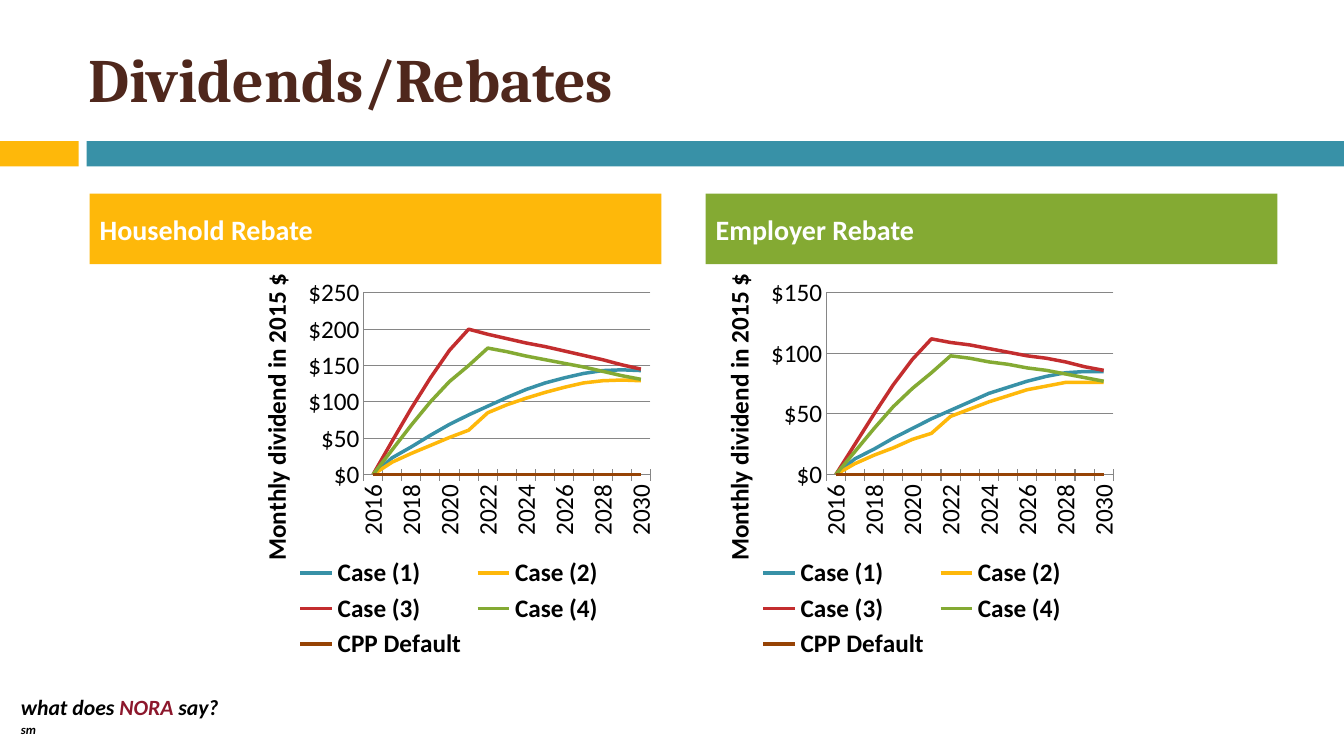
from dataclasses import dataclass

from lxml import etree
from pptx import Presentation
from pptx import util as u
from pptx.chart.chart import Chart
from pptx.chart.data import CategoryChartData
from pptx.dml.color import RGBColor
from pptx.enum import chart as ch
from pptx.enum import shapes, text
from pptx.oxml import parse_xml
from pptx.oxml.ns import nsdecls, qn
from pptx.shapes.autoshape import Shape
from pptx.slide import Slide
from pptx.text.text import Font


@dataclass(frozen=True)
class Theme:
    teal: str = "3891A7"
    gold: str = "FEB80A"
    red: str = "C32D2E"
    green: str = "84AA33"
    rust: str = "964305"
    brown: str = "4F271C"
    wine: str = "8C172C"
    black: str = "000000"
    white: str = "FFFFFF"
    grey: str = "868686"
    head: str = "Cambria"
    body: str = "Calibri"
    title: float = 44
    label: float = 20
    plot: float = 18
    motto: float = 15.5


@dataclass(frozen=True)
class Box:
    left: float
    top: float
    width: float
    height: float

    def emu(self) -> tuple[int, ...]:
        sides = (self.left, self.top, self.width, self.height)
        return tuple(u.Inches(side) for side in sides)


@dataclass(frozen=True)
class Panel:
    name: str
    fill: str
    label: Box
    plot: Box
    rows: tuple[tuple[int, ...], ...]


T = Theme()
YEARS = [str(year) for year in range(2016, 2031)]
CASES = {
    "Case (1)": T.teal,
    "Case (2)": T.gold,
    "Case (3)": T.red,
    "Case (4)": T.green,
    "CPP Default": T.rust,
}
ZERO = (0,) * len(YEARS)
BARS = (
    (Box(0, 1.4, 0.78, 0.25), T.gold),
    (Box(0.86, 1.4, 12.47, 0.25), T.teal),
)
PANELS = (
    Panel("Household Rebate", T.gold, Box(0.89, 1.92, 5.67, 0.7), Box(2.33, 2.67, 4.25, 3.92), (
        (0, 23, 38, 54, 69, 82, 94, 106, 117, 126, 133, 139, 143, 144, 143),
        (0, 17, 29, 40, 51, 61, 85, 96, 105, 113, 120, 126, 129, 130, 129),
        (0, 46, 91, 133, 171, 200, 193, 187, 181, 176, 170, 164, 158, 151, 145),
        (0, 34, 68, 100, 128, 150, 174, 169, 163, 158, 153, 148, 142, 136, 131),
        ZERO,
    )),
    Panel("Employer Rebate", T.green, Box(7, 1.92, 5.67, 0.7), Box(6.92, 2.67, 4.25, 3.92), (
        (0, 13, 21, 30, 38, 46, 53, 60, 67, 72, 77, 81, 84, 85, 85),
        (0, 9, 16, 22, 29, 34, 48, 54, 60, 65, 70, 73, 76, 76, 76),
        (0, 25, 50, 74, 95, 112, 109, 107, 104, 101, 98, 96, 93, 89, 86),
        (0, 19, 38, 56, 71, 84, 98, 96, 93, 91, 88, 86, 83, 80, 77),
        ZERO,
    )),
)
MOTTO = (("what does ", T.black), ("NORA ", T.wine), ("say? ", T.black), ("sm", T.black))


def style(font: Font, size: float, color: str, face: str = T.body, bold: bool = True) -> None:
    font.size = u.Pt(size)
    font.name = face
    font.bold = bold
    font.color.rgb = RGBColor.from_string(color)


def block(slide: Slide, box: Box, fill: str) -> Shape:
    shape = slide.shapes.add_shape(shapes.MSO_SHAPE.RECTANGLE, *box.emu())
    shape.shadow.inherit = False
    shape.fill.solid()
    shape.fill.fore_color.rgb = RGBColor.from_string(fill)
    shape.line.fill.background()
    return shape


def write(shape: Shape, words: str, size: float, color: str, face: str = T.body) -> None:
    frame = shape.text_frame
    frame.word_wrap = True
    frame.vertical_anchor = text.MSO_ANCHOR.MIDDLE
    frame.text = words
    line = frame.paragraphs[0]
    line.alignment = text.PP_ALIGN.LEFT
    style(line.runs[0].font, size, color, face)


def motto(slide: Slide) -> None:
    frame = slide.shapes.add_textbox(*Box(0.11, 6.83, 2.33, 0.36).emu()).text_frame
    frame.word_wrap = False
    frame.auto_size = text.MSO_AUTO_SIZE.SHAPE_TO_FIT_TEXT
    for words, color in MOTTO:
        run = frame.paragraphs[0].add_run()
        run.text = words
        style(run.font, T.motto, color)
        run.font.italic = True
    run.font._element.set("baseline", "30000")


def place(chart: Chart, area: Box) -> None:
    plot = chart._chartSpace.chart.plotArea
    for old in plot.findall(qn("c:layout")):
        plot.remove(old)
    layout = parse_xml(
        f'<c:layout {nsdecls("c")}><c:manualLayout><c:layoutTarget val="inner"/>'
        '<c:xMode val="edge"/><c:yMode val="edge"/>'
        f'<c:x val="{area.left}"/><c:y val="{area.top}"/>'
        f'<c:w val="{area.width}"/><c:h val="{area.height}"/>'
        '</c:manualLayout></c:layout>'
    )
    plot.insert(0, layout)


def axes(chart: Chart) -> None:
    cat, val = chart.category_axis, chart.value_axis
    grey = RGBColor.from_string(T.grey)
    for axis in (cat, val):
        style(axis.tick_labels.font, T.plot, T.black, bold=False)
        axis.format.line.color.rgb = grey
        axis.format.line.width = u.Pt(0.75)
        axis.major_tick_mark = ch.XL_TICK_MARK.NONE
    cat.major_tick_mark = ch.XL_TICK_MARK.CROSS
    cat._element.find(qn("c:txPr")).find(qn("a:bodyPr")).set("rot", "-5400000")
    skip = etree.Element(qn("c:tickLblSkip"), val="2")
    cat._element.find(qn("c:noMultiLvlLbl")).addprevious(skip)
    val.has_major_gridlines = True
    val.major_gridlines.format.line.color.rgb = grey
    val.major_gridlines.format.line.width = u.Pt(0.75)
    val.tick_labels.number_format = '"$"#,##0'
    val.tick_labels.number_format_is_linked = False
    frame = val.axis_title.text_frame
    frame.text = "Monthly dividend in 2015 $"
    style(frame.paragraphs[0].runs[0].font, T.plot, T.black)
    frame._txBody.bodyPr.set("rot", "-5400000")


def graph(slide: Slide, panel: Panel) -> None:
    data = CategoryChartData()
    data.categories = YEARS
    for name, row in zip(CASES, panel.rows):
        data.add_series(name, row)
    chart = slide.shapes.add_chart(ch.XL_CHART_TYPE.LINE, *panel.plot.emu(), data).chart
    style(chart.font, T.plot, T.black, bold=False)
    chart.has_title = False
    chart.has_legend = True
    chart.legend.position = ch.XL_LEGEND_POSITION.BOTTOM
    chart.legend.include_in_layout = False
    style(chart.legend.font, T.plot, T.black)
    chart.plots[0].vary_by_categories = False
    for line, color in zip(chart.plots[0].series, CASES.values()):
        line.smooth = False
        line.marker.style = ch.XL_MARKER_STYLE.NONE
        line.format.line.color.rgb = RGBColor.from_string(color)
        line.format.line.width = u.Pt(2.5)
    axes(chart)
    place(chart, Box(0.3, 0.06, 0.67, 0.46))


def main() -> None:
    deck = Presentation()
    deck.slide_width, deck.slide_height = u.Inches(13.33), u.Inches(7.5)
    slide = deck.slides.add_slide(deck.slide_layouts[6])
    for box, fill in BARS:
        block(slide, box, fill)
    motto(slide)
    title = slide.shapes.add_textbox(*Box(0.78, 0.3, 11.89, 0.95).emu())
    write(title, "Dividends/Rebates", T.title, T.brown, T.head)
    for panel in PANELS:
        graph(slide, panel)
        label = block(slide, panel.label, panel.fill)
        write(label, panel.name, T.label, T.white)
        label.text_frame.paragraphs[0].space_before = u.Pt(7)
    deck.save("out.pptx")


if __name__ == "__main__":
    main()
